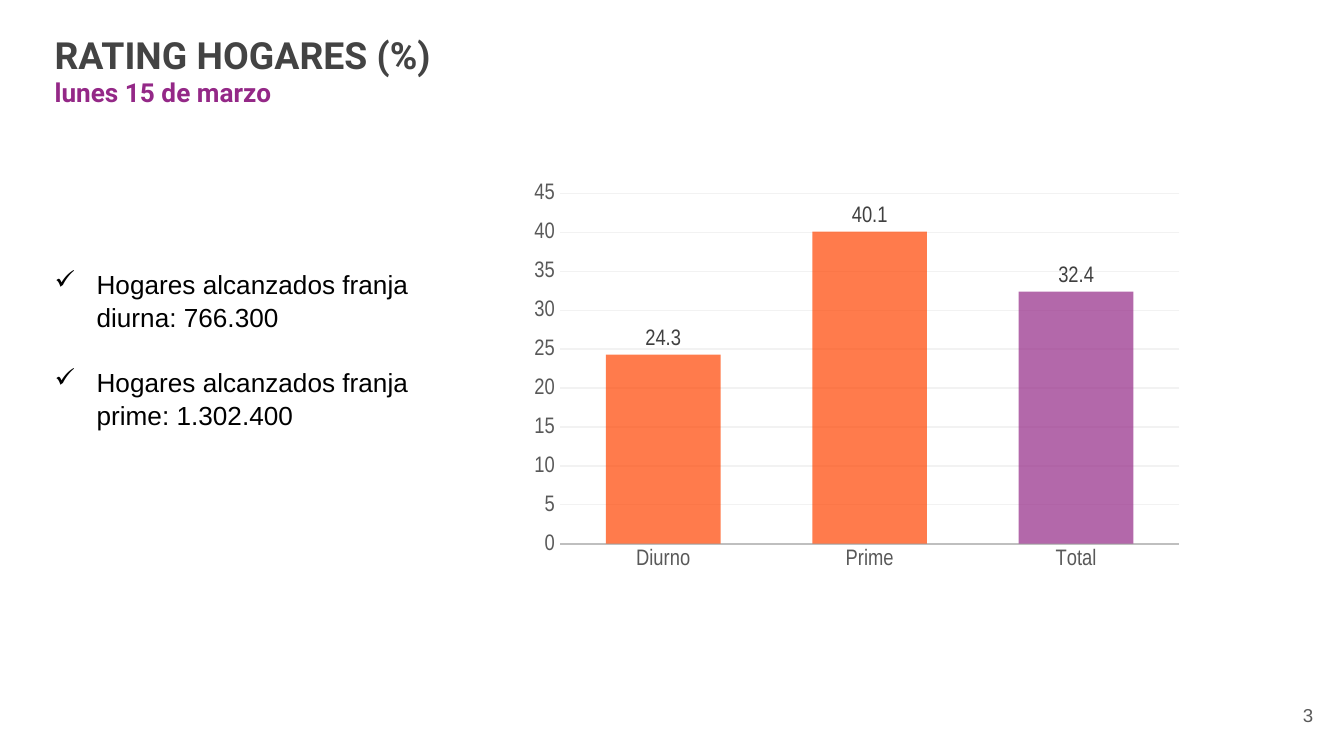
from dataclasses import dataclass

from lxml import etree
from pptx import Presentation
from pptx import util as u
from pptx.chart import data as cd
from pptx.dml.color import RGBColor
from pptx.enum import chart as ce
from pptx.enum import text as te
from pptx.oxml.ns import qn

PX = 9525  # EMU per px, 96 px to the inch


@dataclass(frozen=True)
class Theme:
    heading: str = "Roboto"
    body: str = "Arial"
    chart: str = "Arial Narrow"
    dark: str = "434343"
    purple: str = "942887"
    orange: str = "FF4400"
    black: str = "000000"
    grey: str = "595959"
    label: str = "404040"
    axis: str = "BFBFBF"
    grid: str = "F2F2F2"
    title_pt: int = 20
    text_pt: int = 14
    chart_pt: int = 12
    number_pt: int = 10


T = Theme()


def px(n):
    return u.Emu(n * PX)


def style(font, name, size, color, bold=False):
    font.name, font.size, font.bold = name, u.Pt(size), bold
    font.color.rgb = RGBColor.from_string(color)


def add_text(s, box, lines, anchor, inset_y=10):
    """Add a wrapped text box with one paragraph per line."""
    tf = s.shapes.add_textbox(*map(px, box)).text_frame
    tf.word_wrap = True
    tf.vertical_anchor = anchor
    tf.margin_left = tf.margin_right = px(10)
    tf.margin_top = tf.margin_bottom = px(inset_y)
    tf.text = "\n".join(lines)
    return tf


def add_title(s, box, title, date):
    tf = add_text(s, box, [title, date], te.MSO_ANCHOR.MIDDLE)
    looks = [(T.title_pt, T.dark), (T.text_pt, T.purple)]
    for p, (size, color) in zip(tf.paragraphs, looks):
        style(p.runs[0].font, T.heading, size, color, bold=True)


def add_checklist(s, box, items):
    tf = add_text(s, box, items, te.MSO_ANCHOR.TOP, inset_y=5)
    for i, p in enumerate(tf.paragraphs):
        style(p.runs[0].font, T.body, T.text_pt, T.black)
        p.line_spacing = 1.05
        p.space_before = u.Pt(17 if i else 0)
        # Hanging check mark
        pPr = p._p.get_or_add_pPr()
        pPr.set("marL", str(px(30)))
        pPr.set("indent", str(-px(30)))
        etree.SubElement(pPr, qn("a:buChar")).set("char", "✓")


def fill_bar(fmt, color, alpha=70):
    fmt.fill.solid()
    fmt.fill.fore_color.rgb = RGBColor.from_string(color)
    clr = fmt.fill._xPr.find(".//" + qn("a:srgbClr"))
    etree.SubElement(clr, qn("a:alpha")).set("val", str(alpha * 1000))


def set_line(line, color, width):
    line.color.rgb = RGBColor.from_string(color)
    line.width = u.Pt(width)


def add_rating_chart(s, box, ratings):
    data = cd.CategoryChartData(number_format="General")
    data.categories = list(ratings)
    data.add_series("Series 1", list(ratings.values()))
    chart = s.shapes.add_chart(
        ce.XL_CHART_TYPE.COLUMN_CLUSTERED, *map(px, box), data).chart
    chart.has_legend = chart.has_title = False
    style(chart.font, T.chart, T.number_pt, T.black)

    # Axes
    cat, val = chart.category_axis, chart.value_axis
    for ax in (cat, val):
        ax.major_tick_mark = ax.minor_tick_mark = ce.XL_TICK_MARK.NONE
        style(ax.tick_labels.font, T.chart, T.chart_pt, T.grey)
    set_line(cat.format.line, T.axis, 1.25)
    val.format.line.fill.background()
    val.minimum_scale, val.maximum_scale, val.major_unit = 0, 45, 5
    set_line(val.major_gridlines.format.line, T.grid, 0.75)

    # Bars, with the total in its own colour
    plot = chart.plots[0]
    plot.gap_width, plot.overlap = 80, 25
    plot.vary_by_categories = False
    bars = plot.series[0]
    bars.invert_if_negative = False
    fill_bar(bars.format, T.orange)
    fill_bar(bars.points[len(ratings) - 1].format, T.purple)

    # Value labels
    labels = bars.data_labels
    labels.show_value = True
    labels.position = ce.XL_LABEL_POSITION.OUTSIDE_END
    style(labels.font, T.chart, T.chart_pt, T.label)


def add_page_number(s, box, number):
    tf = add_text(s, box, [str(number)], te.MSO_ANCHOR.MIDDLE)
    p = tf.paragraphs[0]
    p.alignment = te.PP_ALIGN.RIGHT
    style(p.runs[0].font, T.body, T.number_pt, T.grey)


def main():
    prs = Presentation()
    prs.slide_width, prs.slide_height = px(960), px(540)
    s = prs.slides.add_slide(prs.slide_layouts[6])
    add_title(s, (29, 12, 805, 76), "RATING HOGARES (%)", "lunes 15 de marzo")
    add_rating_chart(s, (372, 125, 480, 288),
                     {"Diurno": 24.3, "Prime": 40.1, "Total": 32.4})
    add_checklist(s, (29, 186, 321, 123),
                  ["Hogares alcanzados franja diurna: 766.300",
                   "Hogares alcanzados franja prime: 1.302.400"])
    add_page_number(s, (890, 490, 58, 41), 3)
    prs.save("out.pptx")


if __name__ == "__main__":
    main()
